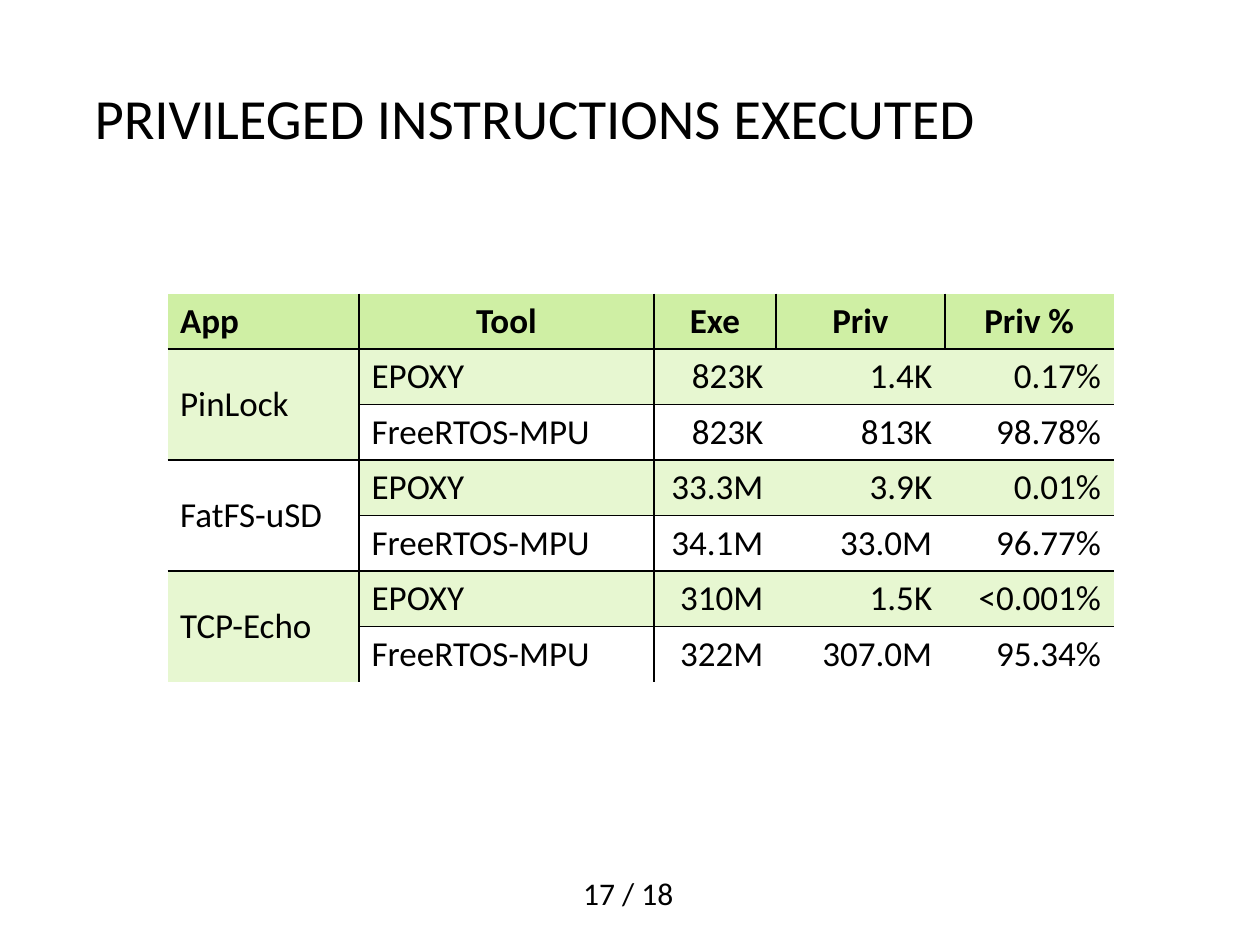
from lxml.etree import SubElement
from pptx import Presentation
from pptx.enum.text import MSO_ANCHOR, MSO_AUTO_SIZE, PP_ALIGN
from pptx.dml.color import RGBColor
from pptx.oxml.ns import qn
from pptx.util import Inches, Pt

COLORS = {"text": "000000", "header": "CFEFA4", "band": "E7F7D1"}
NO_STYLE = "{2D5ABB26-0587-4C30-8999-92F81FD0307C}"
HEADINGS = ["App", "Tool", "Exe", "Priv", "Priv %"]
ROWS = [
    ["PinLock", "EPOXY", "823K", "1.4K", "0.17%"],
    ["", "FreeRTOS-MPU", "823K", "813K", "98.78%"],
    ["FatFS-uSD", "EPOXY", "33.3M", "3.9K", "0.01%"],
    ["", "FreeRTOS-MPU", "34.1M", "33.0M", "96.77%"],
    ["TCP-Echo", "EPOXY", "310M", "1.5K", "<0.001%"],
    ["", "FreeRTOS-MPU", "322M", "307.0M", "95.34%"],
]
COLUMN_WIDTHS = [1.52, 2.34, 0.97, 1.34, 1.34]
ROW_HEIGHT = 0.44


def write(frame, text, size, align=PP_ALIGN.LEFT, bold=False):
    para = frame.paragraphs[0]
    para.alignment = align
    span = para.add_run()
    span.text = text
    font_format = {"name": "Calibri", "size": Pt(size), "bold": bold}
    for name, value in font_format.items():
        setattr(span.font, name, value)
    span.font.color.rgb = RGBColor.from_string(COLORS["text"])


def add_borders(cell, sides):
    """Draw 1 pt lines; sides must keep the order L, R, T, B, before any fill."""
    properties = cell._tc.get_or_add_tcPr()
    for side in sides:
        line = SubElement(properties, qn(f"a:ln{side}"), w=str(Pt(1)))
        fill = SubElement(line, qn("a:solidFill"))
        SubElement(fill, qn("a:srgbClr"), val=COLORS["text"])


deck = Presentation()
deck.slide_width, deck.slide_height = Inches(10), Inches(7.5)
page = deck.slides.add_slide(deck.slide_layouts[5])

title = page.shapes.title
title.left, title.top = Inches(0.75), Inches(0.3)
title.width, title.height = Inches(8.5), Inches(1.25)
title_format = {
    "margin_left": 0,
    "margin_right": 0,
    "vertical_anchor": MSO_ANCHOR.MIDDLE,
    "auto_size": MSO_AUTO_SIZE.NONE,
}
for name, value in title_format.items():
    setattr(title.text_frame, name, value)
write(title.text_frame, "PRIVILEGED INSTRUCTIONS EXECUTED", 32.4)

table_rows = [HEADINGS] + ROWS
table = page.shapes.add_table(
    len(table_rows), len(HEADINGS), Inches(1.33), Inches(2.33),
    Inches(sum(COLUMN_WIDTHS)), Inches(ROW_HEIGHT * len(table_rows)),
).table
table.first_row = table.horz_banding = False
table._tbl.tblPr.find(qn("a:tableStyleId")).text = NO_STYLE
for column, width in zip(table.columns, COLUMN_WIDTHS):
    column.width = Inches(width)
for row in table.rows:
    row.height = Inches(ROW_HEIGHT)

last_row, last_column = len(table_rows) - 1, len(HEADINGS) - 1
for r, values in enumerate(table_rows):
    is_header = r == 0
    for c, value in enumerate(values):
        cell = table.cell(r, c)
        sides = ""
        if c == 1 or (is_header and c > 0):
            sides += "L"
        if c == 0 or (is_header and c < last_column):
            sides += "R"
        if r % 2 == 1:
            sides += "T"
        elif r < last_row:
            sides += "B"
        add_borders(cell, sides)

        # App cells span two rows, so their banding alternates by pair.
        banded = (r - 1) // 2 % 2 == 0 if c == 0 else r % 2 == 1
        if is_header or banded:
            cell.fill.solid()
            color = COLORS["header" if is_header else "band"]
            cell.fill.fore_color.rgb = RGBColor.from_string(color)
        else:
            cell.fill.background()

        if c == 0 or (c == 1 and not is_header):
            align = PP_ALIGN.LEFT
        else:
            align = PP_ALIGN.CENTER if is_header else PP_ALIGN.RIGHT
        if value:
            write(cell.text_frame, value, 20, align, is_header)

for r in range(1, last_row, 2):
    app_cell = table.cell(r, 0)
    app_cell.merge(table.cell(r + 1, 0))
    app_cell.vertical_anchor = MSO_ANCHOR.MIDDLE

page_number = page.shapes.add_textbox(
    Inches(4.53), Inches(6.89), Inches(0.97), Inches(0.4))
page_number.text_frame.word_wrap = False
page_number.text_frame.auto_size = MSO_AUTO_SIZE.SHAPE_TO_FIT_TEXT
write(page_number.text_frame, "17 / 18", 18)

deck.save("out.pptx")
